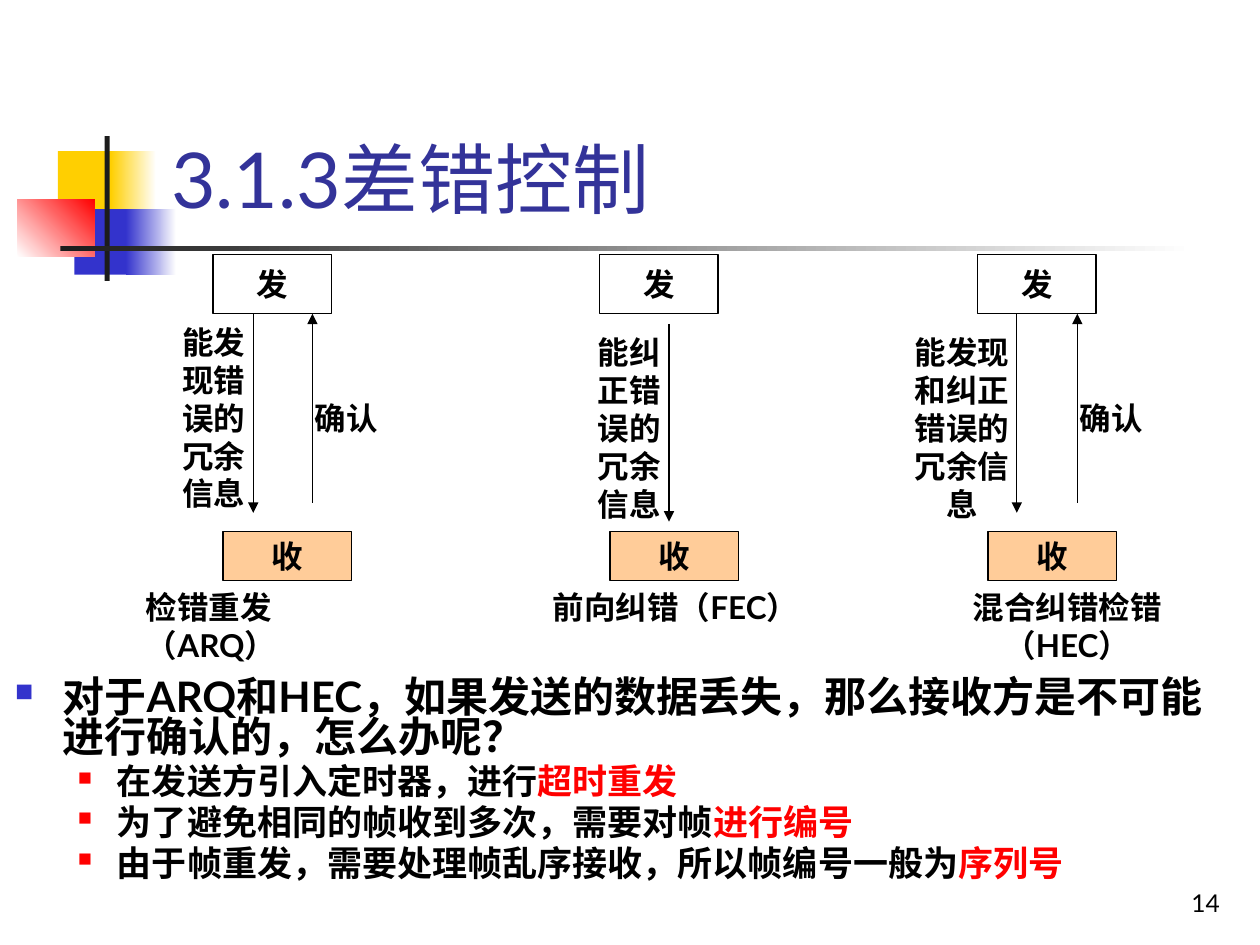
from dataclasses import dataclass
from typing import NamedTuple

from lxml import etree
from pptx import Presentation
from pptx.dml.color import RGBColor
from pptx.enum.shapes import MSO_CONNECTOR, MSO_SHAPE
from pptx.enum.text import MSO_ANCHOR, PP_ALIGN
from pptx.oxml.ns import qn
from pptx.util import Pt

PX = 9144
RECTANGLE = MSO_SHAPE.RECTANGLE
STRAIGHT = MSO_CONNECTOR.STRAIGHT
TOP, MIDDLE, BOTTOM = MSO_ANCHOR.TOP, MSO_ANCHOR.MIDDLE, MSO_ANCHOR.BOTTOM
LEFT, CENTER, RIGHT = PP_ALIGN.LEFT, PP_ALIGN.CENTER, PP_ALIGN.RIGHT


@dataclass(frozen=True)
class Theme:
    font: str = "Lato"
    black: str = "000000"
    white: str = "FFFFFF"
    title: str = "333399"
    yellow: str = "FFCF01"
    blue: str = "3333CC"
    red: str = "FF0000"
    rule: str = "1C1C1C"
    receiver: str = "FFCC99"
    title_size: int = 44
    question_size: int = 24
    answer_size: int = 20
    label_size: int = 18
    number_size: int = 14
    line_width: float = 0.75


THEME = Theme()


class Box(NamedTuple):
    left: int
    top: int
    width: int
    height: int


class Decoration(NamedTuple):
    box: Box
    start: str
    end: str = ""
    angle: int = 0


class Arrow(NamedTuple):
    x: int
    start: int
    end: int


class Label(NamedTuple):
    text: str
    box: Box
    align: PP_ALIGN = LEFT
    anchor: MSO_ANCHOR = TOP


class Scheme(NamedTuple):
    left: int
    arrows: list[Arrow]
    labels: list[Label]


class Bullet(NamedTuple):
    text: str
    emphasis: str
    level: int
    size: int
    color: str
    margin: int
    hanging: int
    bullet_percent: int
    space_before: int


DECORATIONS = [
    Decoration(Box(46, 120, 48, 52), THEME.yellow),
    Decoration(Box(88, 120, 36, 52), THEME.yellow, THEME.white),
    Decoration(Box(59, 166, 46, 52), THEME.blue),
    Decoration(Box(100, 166, 40, 52), THEME.blue, THEME.white),
    Decoration(Box(14, 158, 61, 46), THEME.white, THEME.red, 45),
    Decoration(Box(83, 108, 4, 115), THEME.rule),
    Decoration(Box(48, 195, 900, 4), THEME.rule, THEME.white),
]
SCHEMES = [
    Scheme(169, [Arrow(201, 249, 407), Arrow(248, 399, 249)], [
        Label("能发现错误的冗余信息", Box(124, 296, 91, 71), CENTER, MIDDLE),
        Label("确认", Box(240, 312, 70, 40)),
        Label("检错重发（ARQ）", Box(106, 462, 220, 40)),
    ]),
    Scheme(476, [Arrow(531, 257, 414)], [
        Label("能纠正错误的冗余信息", Box(454, 304, 91, 71), CENTER, MIDDLE),
        Label("前向纠错（FEC）", Box(429, 462, 236, 40)),
    ]),
    Scheme(776, [Arrow(807, 249, 407), Arrow(855, 399, 249)], [
        Label("能发现和纠正错误的冗余信息", Box(712, 304, 103, 71), CENTER, MIDDLE),
        Label("确认", Box(847, 312, 70, 40)),
        Label("混合纠错检错（HEC）", Box(713, 462, 268, 40), CENTER),
    ]),
]
QUESTION = "对于ARQ和HEC，如果发送的数据丢失，那么接收方是不可能进行确认的，怎么办呢？"
ANSWERS = [
    ("在发送方引入定时器，进行", "超时重发"),
    ("为了避免相同的帧收到多次，需要对帧", "进行编号"),
    ("由于帧重发，需要处理帧乱序接收，所以帧编号一般为", "序列号"),
]
BULLETS = [Bullet(QUESTION, "", 0, THEME.question_size, THEME.blue, 38, 38, 60, 5)] + [
    Bullet(text, emphasis, 1, THEME.answer_size, THEME.red, 81, 31, 55, 4)
    for text, emphasis in ANSWERS
]


def rgb(color: str) -> RGBColor:
    return RGBColor.from_string(color)


def emu(box: Box) -> list[int]:
    return [length * PX for length in box]


def style(paragraph, size: int, color: str = THEME.black, bold: bool = True) -> None:
    font = paragraph.font
    font.name, font.size, font.bold = THEME.font, Pt(size), bold
    font.color.rgb = rgb(color)


def add_rectangle(slide, box: Box, color: str):
    shape = slide.shapes.add_shape(RECTANGLE, *emu(box))
    shape.shadow.inherit = False
    shape.fill.solid()
    shape.fill.fore_color.rgb = rgb(color)
    shape.line.fill.background()
    return shape


def add_decoration(slide, item: Decoration) -> None:
    shape = add_rectangle(slide, item.box, item.start)
    if item.end:
        shape.fill.gradient()
        shape.fill.gradient_angle = item.angle
        for stop, color in zip(shape.fill.gradient_stops, (item.start, item.end)):
            stop.color.rgb = rgb(color)


def add_station(slide, box: Box, text: str, color: str) -> None:
    shape = add_rectangle(slide, box, color)
    shape.line.color.rgb = rgb(THEME.black)
    shape.line.width = Pt(THEME.line_width)
    frame = shape.text_frame
    frame.word_wrap, frame.vertical_anchor = False, MIDDLE
    paragraph = frame.paragraphs[0]
    paragraph.text, paragraph.alignment = text, CENTER
    style(paragraph, THEME.label_size)


def add_arrow(slide, arrow: Arrow) -> None:
    x = arrow.x * PX
    connector = slide.shapes.add_connector(STRAIGHT, x, arrow.start * PX, x, arrow.end * PX)
    connector.line.color.rgb = rgb(THEME.black)
    connector.line.width = Pt(THEME.line_width)
    etree.SubElement(connector.line._get_or_add_ln(), qn("a:tailEnd"), type="triangle")
    etree.SubElement(connector._element.spPr, qn("a:effectLst"))


def add_label(slide, label: Label, size: int = THEME.label_size,
              color: str = THEME.black, bold: bool = True) -> None:
    frame = slide.shapes.add_textbox(*emu(label.box)).text_frame
    frame.word_wrap, frame.vertical_anchor = True, label.anchor
    paragraph = frame.paragraphs[0]
    paragraph.text, paragraph.alignment = label.text, label.align
    style(paragraph, size, color, bold)


def add_scheme(slide, scheme: Scheme) -> None:
    add_station(slide, Box(scheme.left, 202, 94, 47), "发", THEME.white)
    add_station(slide, Box(scheme.left + 8, 422, 102, 39), "收", THEME.receiver)
    for arrow in scheme.arrows:
        add_arrow(slide, arrow)
    for label in scheme.labels:
        add_label(slide, label)


def format_bullet(paragraph, bullet: Bullet) -> None:
    paragraph.level = bullet.level
    paragraph.line_spacing, paragraph.space_before = 0.8, Pt(bullet.space_before)
    properties = paragraph._p.get_or_add_pPr()
    properties.set("marL", str(bullet.margin * PX))
    properties.set("indent", str(-bullet.hanging * PX))
    color = etree.SubElement(properties, qn("a:buClr"))
    etree.SubElement(color, qn("a:srgbClr"), val=bullet.color)
    etree.SubElement(properties, qn("a:buSzPct"), val=str(bullet.bullet_percent * 1000))
    etree.SubElement(properties, qn("a:buChar"), char="■")
    style(paragraph, bullet.size)


def add_bullets(slide, box: Box, bullets: list[Bullet]) -> None:
    frame = slide.shapes.add_textbox(*emu(box)).text_frame
    frame.word_wrap = True
    for index, bullet in enumerate(bullets):
        paragraph = frame.add_paragraph() if index else frame.paragraphs[0]
        format_bullet(paragraph, bullet)
        paragraph.add_run().text = bullet.text
        if bullet.emphasis:
            run = paragraph.add_run()
            run.text = bullet.emphasis
            run.font.color.rgb = rgb(THEME.red)


def main() -> None:
    """Build the error-control slide and save it."""
    presentation = Presentation()
    presentation.slide_width, presentation.slide_height = 1000 * PX, 750 * PX
    slide = presentation.slides.add_slide(presentation.slide_layouts[6])
    for item in DECORATIONS:
        add_decoration(slide, item)
    number = Label("14", Box(770, 683, 208, 50), RIGHT, BOTTOM)
    add_label(slide, number, THEME.number_size, bold=False)
    title = Label("3.1.3差错控制", Box(126, 23, 852, 160), LEFT, BOTTOM)
    add_label(slide, title, THEME.title_size, THEME.title, bold=False)
    add_bullets(slide, Box(2, 535, 980, 184), BULLETS)
    for scheme in SCHEMES:
        add_scheme(slide, scheme)
    presentation.save("out.pptx")


if __name__ == "__main__":
    main()
